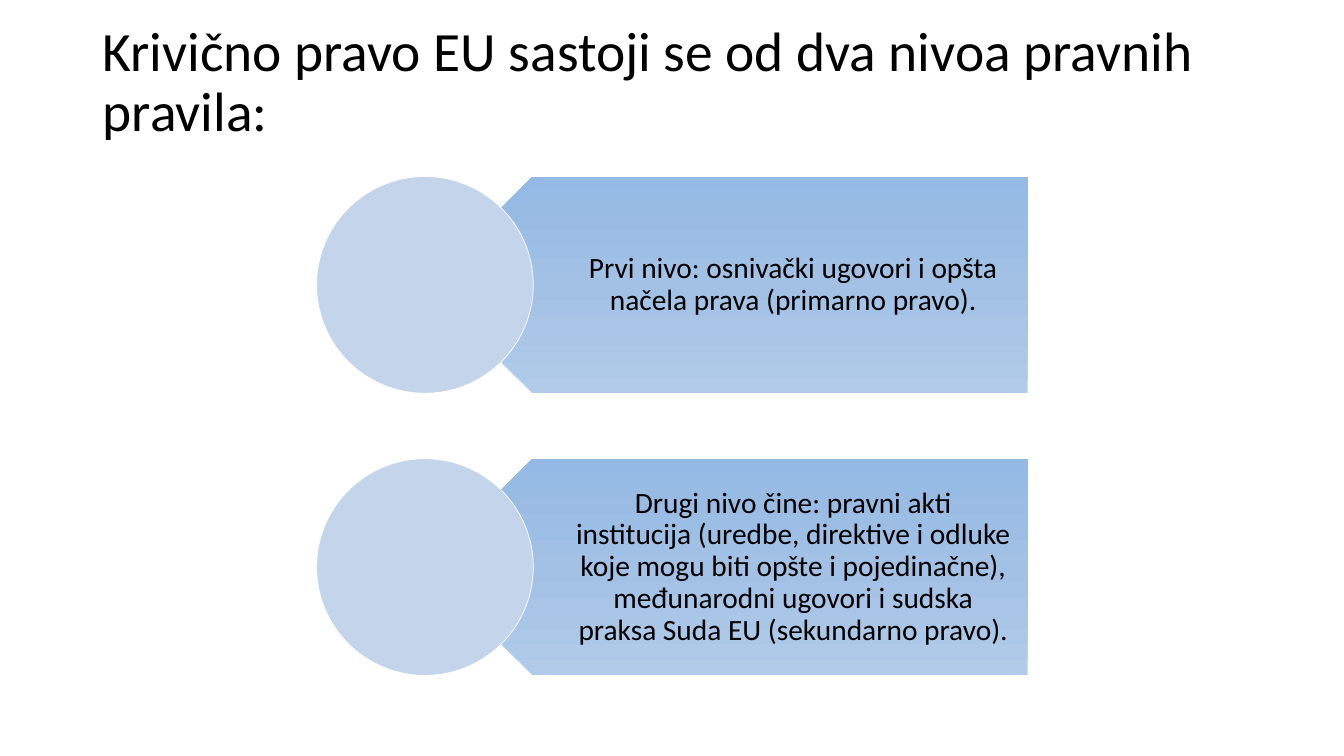
import copy
from pptx import Presentation
from pptx import util as u
from pptx.dml.color import RGBColor
from pptx.enum import shapes, text

COLORS = {
    "text": "000000",
    "light": "B1CBE9",
    "mid": "A3C1E5",
    "dark": "93B9E4",
    "circle": "C4D5EB",
    "outline": "FFFFFF",
}
TITLE = "Krivično pravo EU sastoji se od dva nivoa pravnih pravila:"
LEVELS = [
    "Prvi nivo: osnivački ugovori i opšta načela prava (primarno pravo).",
    "Drugi nivo čine: pravni akti institucija (uredbe, direktive i odluke koje mogu "
    "biti opšte i pojedinačne), međunarodni ugovori i sudska praksa Suda EU "
    "(sekundarno pravo).",
]
TOP, STEP, SIZE = 4.45, 7.11, 5.46


def rgb(name):
    return RGBColor.from_string(COLORS[name])


def add_text(slide, box, words, size, align, insets):
    tf = slide.shapes.add_textbox(*[u.Cm(v) for v in box]).text_frame
    sides = ("margin_left", "margin_top", "margin_right", "margin_bottom")
    frame = {"word_wrap": True, "vertical_anchor": text.MSO_ANCHOR.MIDDLE}
    frame.update(zip(sides, [u.Cm(v) for v in insets]))
    for key, value in frame.items():
        setattr(tf, key, value)
    p = tf.paragraphs[0]
    p.alignment = align
    p.line_spacing = 0.9
    r = p.add_run()
    r.text = words
    for key, value in {"name": "Calibri", "size": u.Pt(size)}.items():
        setattr(r.font, key, value)
    r.font.color.rgb = rgb("text")


prs = Presentation()
prs.slide_width, prs.slide_height = u.Cm(33.87), u.Cm(19.05)
s = prs.slides.add_slide(prs.slide_layouts[6])

add_text(s, (2.34, 1.02, 29.21, 3.68), TITLE, 39.6,
         text.PP_ALIGN.LEFT, (0.25, 0.13, 0.25, 1.65))

for i, words in enumerate(LEVELS):
    top = TOP + i * STEP

    sp = s.shapes.add_shape(shapes.MSO_SHAPE.PENTAGON,
                            u.Cm(10.69), u.Cm(top), u.Cm(15.21), u.Cm(SIZE))
    sp.rotation = 180
    sp.shadow.inherit = False
    sp.line.fill.background()
    sp.fill.gradient()
    sp.fill.gradient_angle = 270
    stops = sp.fill._fill._gradFill.gsLst
    stops.insert(1, copy.deepcopy(stops[0]))
    for n, name in enumerate(("light", "mid", "dark")):
        stop = sp.fill.gradient_stops[n]
        stop.position = n / 2
        stop.color.rgb = rgb(name)

    add_text(s, (12.07, top, 13.84, SIZE), words, 21,
             text.PP_ALIGN.CENTER, (2.41, 0.23, 0.41, 0.23))

    sp = s.shapes.add_shape(shapes.MSO_SHAPE.OVAL,
                            u.Cm(7.98), u.Cm(top), u.Cm(SIZE), u.Cm(SIZE))
    sp.shadow.inherit = False
    sp.fill.solid()
    sp.fill.fore_color.rgb = rgb("circle")
    sp.line.color.rgb = rgb("outline")
    sp.line.width = u.Pt(0.5)

prs.save("out.pptx")
